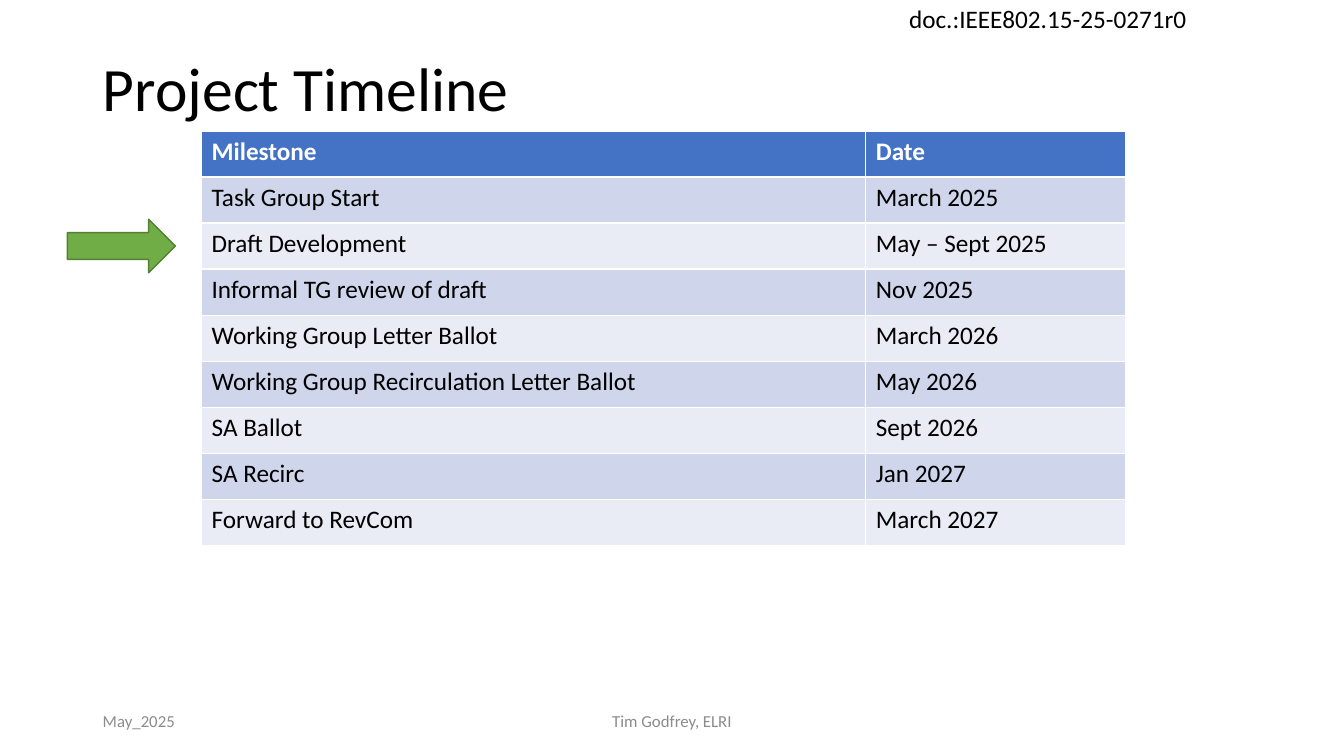
import pptx
import pptx.util
import pptx.dml.color
import pptx.enum.shapes
import pptx.enum.text
from dataclasses import dataclass

TITLE = "Project Timeline"
DOCUMENT_NUMBER = "doc.:IEEE802.15-25-0271r0"
MEETING_DATE = "May_2025"
AUTHOR = "Tim Godfrey, ELRI"
HEADINGS = ("Milestone", "Date")
MILESTONES = [
    ("Task Group Start", "March 2025"),
    ("Draft Development", "May – Sept 2025"),
    ("Informal TG review of draft", "Nov 2025"),
    ("Working Group Letter Ballot", "March 2026"),
    ("Working Group Recirculation Letter Ballot", "May 2026"),
    ("SA Ballot", "Sept 2026"),
    ("SA Recirc", "Jan 2027"),
    ("Forward to RevCom", "March 2027"),
]
CURRENT_ROW = 2


@dataclass(frozen=True)
class Theme:
    font: str = "Calibri"
    title_size: int = 44
    text_size: int = 18
    footer_size: int = 12
    text: str = "000000"
    heading_text: str = "FFFFFF"
    footer_text: str = "8C8C8C"
    heading_fill: str = "4472C4"
    bands: tuple = ("E9EBF5", "CFD5EA")
    arrow_fill: str = "70AD47"
    arrow_line: str = "538035"


THEME = Theme()
Cm = pptx.util.Cm
ALIGN = pptx.enum.text.PP_ALIGN
ANCHOR = pptx.enum.text.MSO_ANCHOR
LEFT_MARGIN = 2.34
FOOTER_TOP = 17.65
TABLE_LEFT, TABLE_TOP = 5.08, 3.3
COLUMN_WIDTHS = (16.74, 6.55)
ROW_HEIGHT = 1.16
ARROW_LEFT, ARROW_WIDTH, ARROW_HEIGHT = 1.7, 2.72, 1.35


def color(value):
    return pptx.dml.color.RGBColor.from_string(value)


def write(frame, text, size=THEME.text_size, fill=THEME.text, bold=False,
          align=ALIGN.LEFT, spacing=1.0):
    para = frame.paragraphs[0]
    para.alignment = align
    para.line_spacing = spacing
    span = para.add_run()
    span.text = text
    span.font.name = THEME.font
    span.font.size = pptx.util.Pt(size)
    span.font.bold = bold
    span.font.color.rgb = color(fill)


def add_label(page, text, left, top, width, wrap=True, anchor=ANCHOR.MIDDLE, **style):
    box = page.shapes.add_textbox(Cm(left), Cm(top), Cm(width), Cm(1.01))
    box.text_frame.word_wrap = wrap
    box.text_frame.vertical_anchor = anchor
    write(box.text_frame, text, **style)


def add_title(page):
    title = page.shapes.title
    title.left, title.top = Cm(LEFT_MARGIN), Cm(1.02)
    title.width, title.height = Cm(29.21), Cm(2.59)
    title.text_frame.vertical_anchor = ANCHOR.MIDDLE
    write(title.text_frame, TITLE, size=THEME.title_size, spacing=0.9)


def add_timeline(page):
    rows = [HEADINGS] + MILESTONES
    table = page.shapes.add_table(
        len(rows), len(HEADINGS), Cm(TABLE_LEFT), Cm(TABLE_TOP),
        Cm(sum(COLUMN_WIDTHS)), Cm(ROW_HEIGHT * len(rows))).table
    for column, width in zip(table.columns, COLUMN_WIDTHS):
        column.width = Cm(width)
    for index, texts in enumerate(rows):
        table.rows[index].height = Cm(ROW_HEIGHT)
        heading = index == 0
        for column, text in enumerate(texts):
            cell = table.cell(index, column)
            cell.fill.solid()
            cell.fill.fore_color.rgb = color(
                THEME.heading_fill if heading else THEME.bands[index % 2])
            write(cell.text_frame, text, bold=heading,
                  fill=THEME.heading_text if heading else THEME.text)


def add_progress_arrow(page):
    middle = TABLE_TOP + (CURRENT_ROW + 0.5) * ROW_HEIGHT
    arrow = page.shapes.add_shape(
        pptx.enum.shapes.MSO_SHAPE.RIGHT_ARROW, Cm(ARROW_LEFT),
        Cm(middle - ARROW_HEIGHT / 2), Cm(ARROW_WIDTH), Cm(ARROW_HEIGHT))
    arrow.shadow.inherit = False
    arrow.fill.solid()
    arrow.fill.fore_color.rgb = color(THEME.arrow_fill)
    arrow.line.color.rgb = color(THEME.arrow_line)
    arrow.line.width = pptx.util.Pt(1)


def main():
    deck = pptx.Presentation()
    deck.slide_width, deck.slide_height = Cm(33.87), Cm(19.05)
    page = deck.slides.add_slide(deck.slide_layouts.get_by_name("Title Only"))
    footer = {"size": THEME.footer_size, "fill": THEME.footer_text}
    add_label(page, DOCUMENT_NUMBER, 22.66, -0.05, 7.57, wrap=False, anchor=ANCHOR.TOP)
    add_title(page)
    add_label(page, AUTHOR, 11.22, FOOTER_TOP, 11.43, align=ALIGN.CENTER, **footer)
    add_timeline(page)
    add_label(page, MEETING_DATE, LEFT_MARGIN, FOOTER_TOP, 7.62, **footer)
    add_progress_arrow(page)
    deck.save("out.pptx")


if __name__ == "__main__":
    main()
